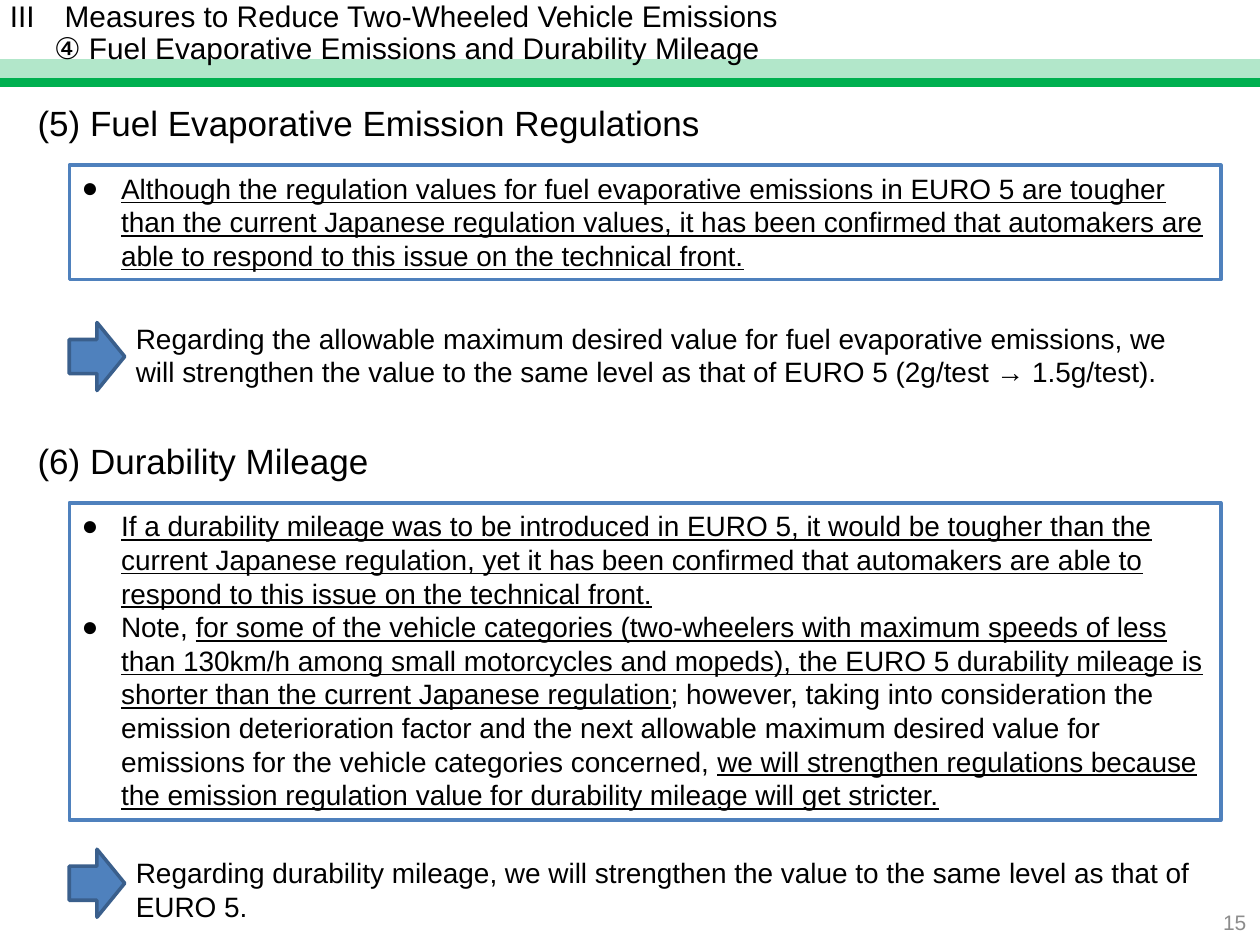
from lxml import etree
from pptx import Presentation
from pptx.dml.color import RGBColor
from pptx.enum.shapes import MSO_SHAPE
from pptx.enum.text import MSO_ANCHOR, MSO_AUTO_SIZE, PP_ALIGN
from pptx.oxml.ns import qn
from pptx.util import Pt

BLACK = RGBColor(0x00, 0x00, 0x00)
WHITE = RGBColor(0xFF, 0xFF, 0xFF)
GREY = RGBColor(0x8C, 0x8C, 0x8C)
GREEN = RGBColor(0x00, 0xB0, 0x50)
BLUE = RGBColor(0x4F, 0x81, 0xBD)
DARK_BLUE = RGBColor(0x3A, 0x5F, 0x8C)

HEADING_LEFT, HEADING_WIDTH = 8.64, 689
FRAME_LEFT, FRAME_WIDTH = 39.6, 658
RESULT_LEFT, RESULT_WIDTH = 70.56, 627
BULLET_INDENT = 22.5

# Each finding is a list of (text, underlined) spans.
SECTIONS = [
    {
        "heading": ("(5) Fuel Evaporative Emission Regulations", 54.7),
        "frame": (94.3, 65.5),
        "findings": [
            [("Although the regulation values for fuel evaporative emissions in EURO 5 are "
              "tougher than the current Japanese regulation values, it has been confirmed "
              "that automakers are able to respond to this issue on the technical front.", True)],
        ],
        "arrow_top": 184.3,
        "result": ("Regarding the allowable maximum desired value for fuel evaporative "
                   "emissions, we will strengthen the value to the same level as that of "
                   "EURO 5 (2g/test → 1.5g/test).", 180),
    },
    {
        "heading": ("(6) Durability Mileage", 247.7),
        "frame": (287.3, 181.4),
        "findings": [
            [("If a durability mileage was to be introduced in EURO 5, it would be tougher "
              "than the current Japanese regulation, yet it has been confirmed that "
              "automakers are able to respond to this issue on the technical front.", True)],
            [("Note, ", False),
             ("for some of the vehicle categories (two-wheelers with maximum speeds of less "
              "than 130km/h among small motorcycles and mopeds), the EURO 5 durability "
              "mileage is shorter than the current Japanese regulation", True),
             ("; however, taking into consideration the emission deterioration factor and "
              "the next allowable maximum desired value for emissions for the vehicle "
              "categories concerned, ", False),
             ("we will strengthen regulations because the emission regulation value for "
              "durability mileage will get stricter.", True)],
        ],
        "arrow_top": 485.3,
        "result": ("Regarding durability mileage, we will strengthen the value to the same "
                   "level as that of EURO 5.", 485.3),
    },
]

deck = Presentation()
deck.slide_width, deck.slide_height = Pt(720), Pt(540)
page = deck.slides.add_slide(deck.slide_layouts[6])


def add_block(preset, left, top, width, height, fill, line=None):
    block = page.shapes.add_shape(preset, Pt(left), Pt(top), Pt(width), Pt(height))
    block.shadow.inherit = False
    block.fill.solid()
    block.fill.fore_color.rgb = fill
    if line is None:
        block.line.fill.background()
    else:
        block.line.color.rgb = line
        block.line.width = Pt(2)
    return block


def add_text(lines, left, top, width, height, size, color=BLACK):
    box = page.shapes.add_textbox(Pt(left), Pt(top), Pt(width), Pt(height))
    frame = box.text_frame
    frame.word_wrap = True
    frame.text = "\n".join(lines)
    for paragraph in frame.paragraphs:
        paragraph.font.name = "Arial"
        paragraph.font.size = Pt(size)
        paragraph.font.color.rgb = color
    return frame


# Header bands
add_block(MSO_SHAPE.RECTANGLE, 0, 45.4, 720, 3.6, GREEN, GREEN)
pale_band = add_block(MSO_SHAPE.RECTANGLE, 0, 33.8, 720, 13, GREEN)
band_color = pale_band.fill._xPr.find(qn("a:solidFill"))[0]
etree.SubElement(band_color, qn("a:alpha")).set("val", "30000")

# Sections: heading, framed findings, arrow and result
for section in SECTIONS:
    heading, heading_top = section["heading"]
    heading_frame = add_text([heading], HEADING_LEFT, heading_top, HEADING_WIDTH, 31.7, 20)
    heading_frame.margin_left = Pt(12.8)

    top, height = section["frame"]
    findings_box = add_block(MSO_SHAPE.RECTANGLE, FRAME_LEFT, top, FRAME_WIDTH, height, WHITE, BLUE)
    frame = findings_box.text_frame
    frame.word_wrap = True
    frame.auto_size = MSO_AUTO_SIZE.SHAPE_TO_FIT_TEXT
    frame.vertical_anchor = MSO_ANCHOR.TOP
    for index, finding in enumerate(section["findings"]):
        paragraph = frame.add_paragraph() if index else frame.paragraphs[0]
        paragraph.alignment = PP_ALIGN.LEFT
        properties = paragraph._p.get_or_add_pPr()
        properties.set("marL", str(Pt(BULLET_INDENT)))
        properties.set("indent", str(-Pt(BULLET_INDENT)))
        etree.SubElement(properties, qn("a:buFont")).set("typeface", "Arial")
        etree.SubElement(properties, qn("a:buChar")).set("char", "●")
        paragraph.font.name = "Arial"
        paragraph.font.size = Pt(16)
        paragraph.font.color.rgb = BLACK
        for text, underlined in finding:
            span = paragraph.add_run()
            span.text = text
            span.font.color.rgb = BLACK
            span.font.underline = underlined

    add_block(MSO_SHAPE.RIGHT_ARROW, FRAME_LEFT, section["arrow_top"], 31.7, 38.9, BLUE, DARK_BLUE)
    result, result_top = section["result"]
    add_text([result], RESULT_LEFT, result_top, RESULT_WIDTH, 46, 16)

# Page number
number_frame = add_text(["15"], 551.5, 512.6, 167.8, 28.8, 12, GREY)
number_frame.vertical_anchor = MSO_ANCHOR.MIDDLE
number_frame.paragraphs[0].alignment = PP_ALIGN.RIGHT

# Page title
title_frame = add_text(
    ["III　Measures to Reduce Two-Wheeled Vehicle Emissions",
     "④ Fuel Evaporative Emissions and Durability Mileage"],
    -1.4, -2.2, 718.6, 43.9, 17)
for paragraph in title_frame.paragraphs:
    paragraph.line_spacing = Pt(18)
title_frame.paragraphs[1]._p.get_or_add_pPr().set("indent", str(Pt(25.2)))

deck.save("out.pptx")
